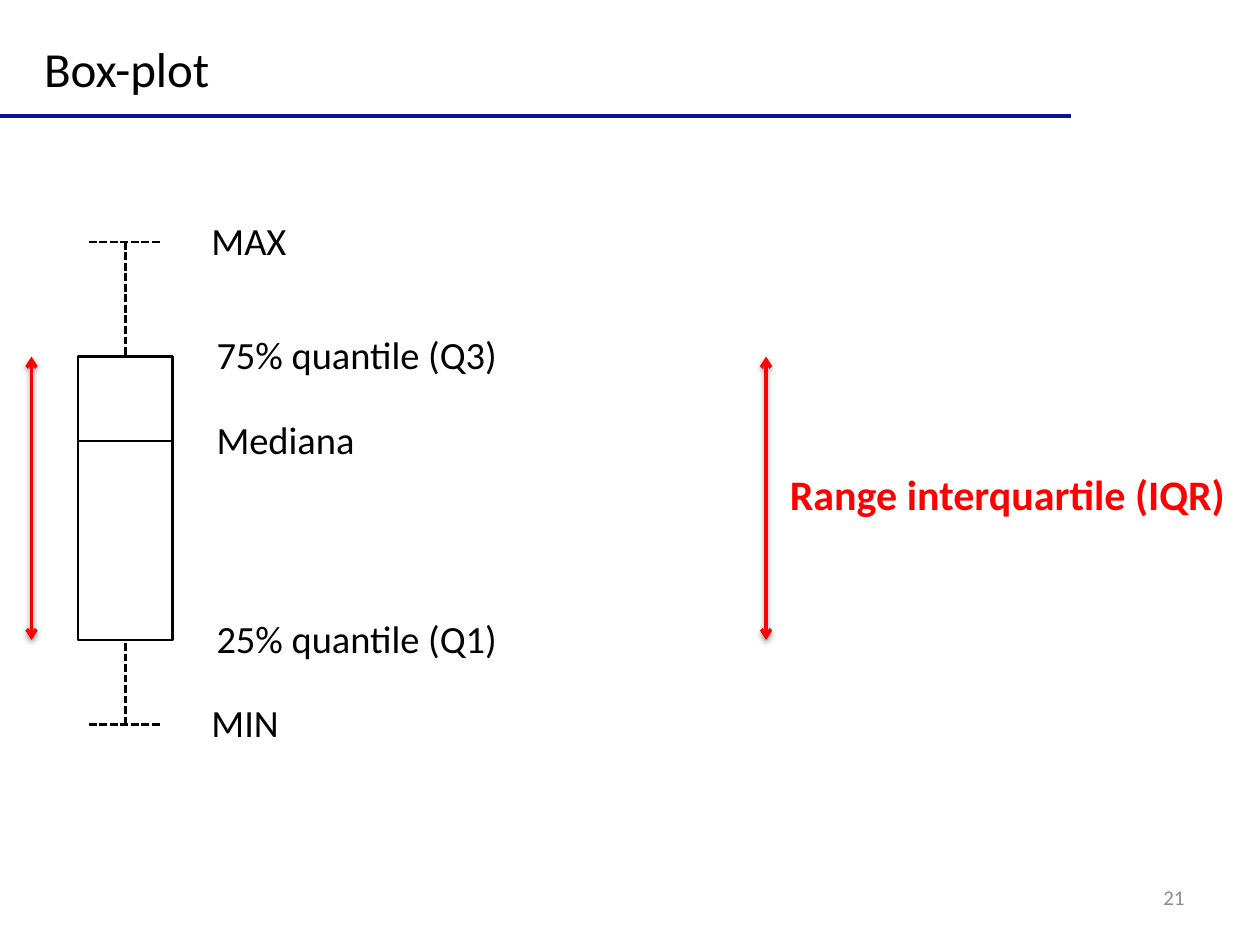
from lxml import etree
from pptx import Presentation
from pptx.dml.color import RGBColor
from pptx.enum import dml, shapes, text
from pptx.oxml import parse_xml
from pptx.oxml.ns import nsdecls, qn
from pptx.util import Inches, Pt

COLORS = {"ink": "000000", "rule": "0C1290", "range": "FF0000",
          "page": "8C8C8C", "box": "FFFFFF"}
SHADOW = (f'<a:effectLst {nsdecls("a")}><a:outerShdw blurRad="40000" dist="20000" '
          'dir="5400000" rotWithShape="0"><a:srgbClr val="000000">'
          '<a:alpha val="38000"/></a:srgbClr></a:outerShdw></a:effectLst>')


def add_line(x1, y1, x2, y2, color="ink", width=1.5, dash=False):
    """Draw a straight line without a shadow."""
    line = slide.shapes.add_connector(
        shapes.MSO_CONNECTOR.STRAIGHT, Inches(x1), Inches(y1), Inches(x2), Inches(y2))
    line.line.color.rgb = RGBColor.from_string(COLORS[color])
    line.line.width = Pt(width)
    if dash:
        line.line.dash_style = dml.MSO_LINE.SQUARE_DOT
    etree.SubElement(line._element.spPr, qn("a:effectLst"))
    return line


def set_text(shape, words, size, color="ink", bold=False, align=text.PP_ALIGN.LEFT):
    """Fill a shape with one unwrapped paragraph."""
    frame = shape.text_frame
    frame.word_wrap = False
    frame.auto_size = text.MSO_AUTO_SIZE.SHAPE_TO_FIT_TEXT
    para = frame.paragraphs[0]
    para.text = words
    para.alignment = align
    font = para.font
    font.name, font.size, font.bold = "Calibri", Pt(size), bold
    font.color.rgb = RGBColor.from_string(COLORS[color])
    return frame


deck = Presentation()
deck.slide_width, deck.slide_height = Inches(10), Inches(7.5)
slide = deck.slides.add_slide(deck.slide_layouts[5])

# Title and rule
title = slide.shapes.title
title.left, title.top = Inches(0.25), Inches(0.25)
title.width, title.height = Inches(1.54), Inches(0.57)
set_text(title, "Box-plot", 28)
add_line(0, 0.92, 8.5, 0.92, "rule", 2)

# Box with median
left, wide = 0.62, 0.75
mid = left + wide / 2
top, median, low = 2.83, 3.5, 5.08
box = slide.shapes.add_shape(shapes.MSO_SHAPE.RECTANGLE, Inches(left), Inches(top),
                             Inches(wide), Inches(low - top))
box.shadow.inherit = False
box.fill.solid()
box.fill.fore_color.rgb = RGBColor.from_string(COLORS["box"])
box.line.color.rgb = RGBColor.from_string(COLORS["ink"])
box.line.width = Pt(1.5)
add_line(left, median, left + wide, median)

# Whiskers: end height, box edge, side of the box
for end, edge, side in [(5.75, low, 2), (1.92, top, 0)]:
    add_line(mid, end, mid, edge, dash=True).end_connect(box, side)
    add_line(mid - 0.29, end, mid + 0.29, end, dash=True)

# Interquartile range arrows
for x in (0.25, 6.08):
    arrow = add_line(x, top, x, low, "range", 2)
    for tag in ("a:headEnd", "a:tailEnd"):
        etree.SubElement(arrow.line._get_or_add_ln(), qn(tag), type="arrow")
    props = arrow._element.spPr
    props.replace(props.find(qn("a:effectLst")), parse_xml(SHADOW))

# Labels
for words, x, y, w in [("MAX", 1.58, 1.67, 0.8),
                       ("75% quantile (Q3)", 1.62, 2.58, 2.45),
                       ("Mediana", 1.62, 3.25, 1.31),
                       ("25% quantile (Q1)", 1.62, 4.83, 2.45),
                       ("MIN", 1.58, 5.5, 0.74)]:
    label = slide.shapes.add_textbox(Inches(x), Inches(y), Inches(w), Inches(0.47))
    set_text(label, words, 22)

label = slide.shapes.add_textbox(Inches(6.17), Inches(3.67), Inches(3.69), Inches(0.5))
set_text(label, "Range interquartile (IQR)", 24, "range", bold=True)

# Page number
page = slide.shapes.add_textbox(Inches(7.17), Inches(6.92), Inches(2.33), Inches(0.4))
frame = set_text(page, "21", 12, "page", align=text.PP_ALIGN.RIGHT)
frame.word_wrap = True
frame.auto_size = text.MSO_AUTO_SIZE.NONE
frame.vertical_anchor = text.MSO_ANCHOR.MIDDLE

deck.save("out.pptx")
